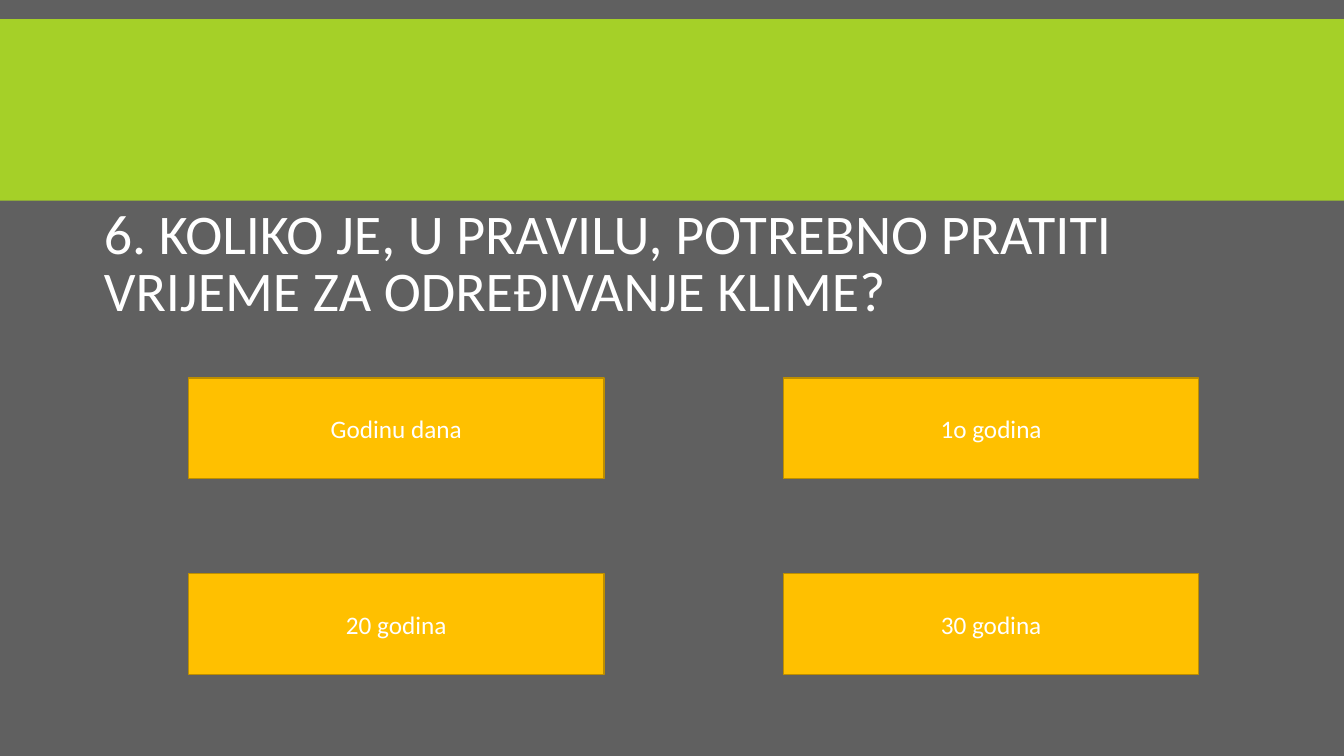
from pptx import Presentation
from pptx.dml.color import RGBColor
from pptx.enum.shapes import MSO_SHAPE as Shape
from pptx.enum.text import MSO_ANCHOR as Anchor, MSO_AUTO_SIZE as AutoSize, PP_ALIGN as Align
from pptx.util import Inches, Pt

GRAY = RGBColor(0x60, 0x60, 0x60)
GREEN = RGBColor(0xA5, 0xD0, 0x28)
AMBER = RGBColor(0xFF, 0xC0, 0x00)
BROWN = RGBColor(0xBD, 0x8E, 0x00)
WHITE = RGBColor(0xFF, 0xFF, 0xFF)


class QuizPage:
    """Holds the quiz style and the current slide."""

    font = "Calibri"

    def __init__(self, deck):
        self.page = deck.slides.add_slide(deck.slide_layouts[5])
        fill = self.page.background.fill
        fill.solid()
        fill.fore_color.rgb = GRAY

    def set_text(self, box, text, size, align):
        frame = box.text_frame
        frame.text = text
        frame.word_wrap = True
        frame.auto_size = AutoSize.NONE
        frame.vertical_anchor = Anchor.MIDDLE
        para = frame.paragraphs[0]
        para.alignment = align
        for span in para.runs:
            span.font.name = self.font
            span.font.size = Pt(size)
            span.font.color.rgb = WHITE
        return para

    def title(self, text, left, top, width, height):
        box = self.page.shapes.title
        box.left, box.top = Inches(left), Inches(top)
        box.width, box.height = Inches(width), Inches(height)
        para = self.set_text(box, text, 40, Align.LEFT)
        para.line_spacing = 0.85

    def rectangle(self, left, top, width, height, color):
        box = self.page.shapes.add_shape(
            Shape.RECTANGLE, Inches(left), Inches(top), Inches(width), Inches(height))
        box.shadow.inherit = False
        box.fill.solid()
        box.fill.fore_color.rgb = color
        return box

    def band(self, left, top, width, height):
        box = self.rectangle(left, top, width, height, GREEN)
        box.line.fill.background()
        self.page.shapes.title.element.addprevious(box.element)

    def answer(self, text, left, top):
        box = self.rectangle(left, top, 4.12, 1, AMBER)
        box.line.color.rgb = BROWN
        box.line.width = Pt(1)
        self.set_text(box, text, 18, Align.CENTER)


def main():
    deck = Presentation()
    deck.slide_width, deck.slide_height = Inches(13.33), Inches(7.5)
    quiz = QuizPage(deck)
    quiz.band(0, 0.19, 13.33, 1.8)
    quiz.title("6. KOLIKO JE, U PRAVILU, POTREBNO PRATITI VRIJEME ZA ODREĐIVANJE KLIME?",
               0.93, 1.99, 11.18, 1.29)
    answers = [["Godinu dana", "1o godina"], ["20 godina", "30 godina"]]
    for row, texts in enumerate(answers):
        for column, text in enumerate(texts):
            quiz.answer(text, 1.87 + 5.9 * column, 3.75 + 1.94 * row)
    deck.save("out.pptx")


if __name__ == "__main__":
    main()
